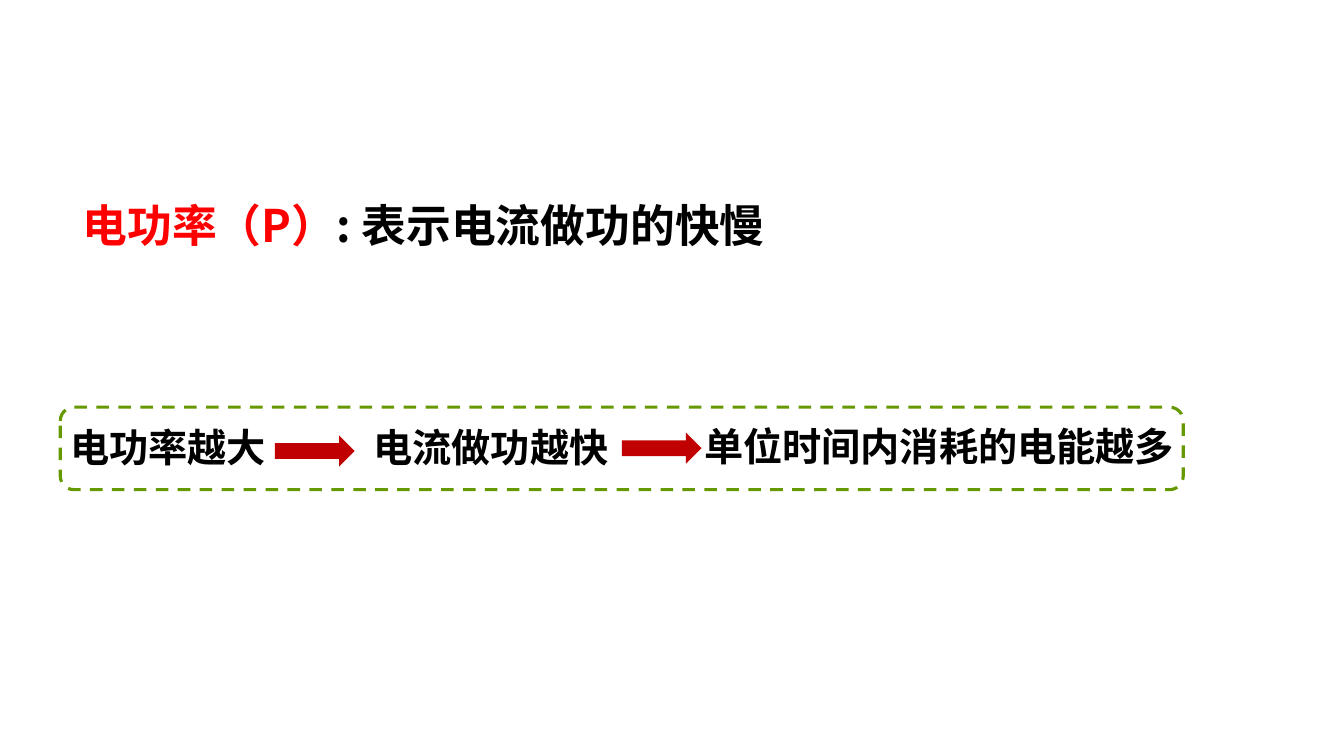
from lxml import etree
from pptx import Presentation
from pptx import util as u
from pptx.dml.color import RGBColor
from pptx.enum import dml, shapes, text
from pptx.oxml import ns

FONT = "Noto Sans CJK SC"
BLACK, RED, DARK_RED, GREEN = "000000", "FF0000", "C00000", "669900"


def color(hex_value):
    return RGBColor.from_string(hex_value)


class SlideBuilder:
    def __init__(self, slide, font_name):
        self.slide = slide
        self.font_name = font_name

    def add_text(self, left, top, width, height, parts, size, wrap=True):
        """Add one bold line made of (wording, colour) parts."""
        box = self.slide.shapes.add_textbox(
            u.Cm(left), u.Cm(top), u.Cm(width), u.Cm(height))
        frame = box.text_frame
        frame.word_wrap = wrap
        frame.auto_size = text.MSO_AUTO_SIZE.SHAPE_TO_FIT_TEXT
        for wording, hex_value in parts:
            run = frame.paragraphs[0].add_run()
            run.text = wording
            run.font.size = u.Pt(size)
            run.font.bold = True
            run.font.name = self.font_name
            run.font.color.rgb = color(hex_value)
            east_asian = etree.SubElement(run.font._element, ns.qn("a:ea"))
            east_asian.set("typeface", self.font_name)

    def add_preset(self, kind, left, top, width, height):
        shape = self.slide.shapes.add_shape(
            kind, u.Cm(left), u.Cm(top), u.Cm(width), u.Cm(height))
        shape.shadow.inherit = False
        return shape

    def add_arrow(self, left, top):
        arrow = self.add_preset(
            shapes.MSO_SHAPE.RIGHT_ARROW, left, top, 2.01, 0.79)
        arrow.fill.solid()
        arrow.fill.fore_color.rgb = color(DARK_RED)
        arrow.line.fill.background()

    def add_dashed_frame(self, left, top, width, height):
        frame = self.add_preset(
            shapes.MSO_SHAPE.ROUNDED_RECTANGLE, left, top, width, height)
        frame.fill.background()
        frame.line.color.rgb = color(GREEN)
        frame.line.width = u.Pt(2.25)
        frame.line.dash_style = dml.MSO_LINE.DASH


def main():
    presentation = Presentation()
    presentation.slide_width = u.Cm(33.87)
    presentation.slide_height = u.Cm(19.05)
    slide = presentation.slides.add_slide(presentation.slide_layouts[6])
    builder = SlideBuilder(slide, FONT)

    builder.add_text(1.83, 4.85, 22.17, 1.63,
                     [("电功率（P）", RED), (": 表示电流做功的快慢", BLACK)], 32)

    builder.add_dashed_frame(1.52, 10.26, 28.3, 2.08)
    steps = [
        ("电功率越大", 1.52, 10.54, 29.18, True),
        (" 电流做功越快", 8.94, 10.54, 6.73, False),
        ("单位时间内消耗的电能越多", 17.5, 10.52, 13.23, True),
    ]
    for wording, left, top, width, wrap in steps:
        builder.add_text(left, top, width, 1.45, [(wording, BLACK)], 28, wrap)
    for left, top in [(6.93, 10.97), (15.67, 10.9)]:
        builder.add_arrow(left, top)

    presentation.save("out.pptx")


if __name__ == "__main__":
    main()
